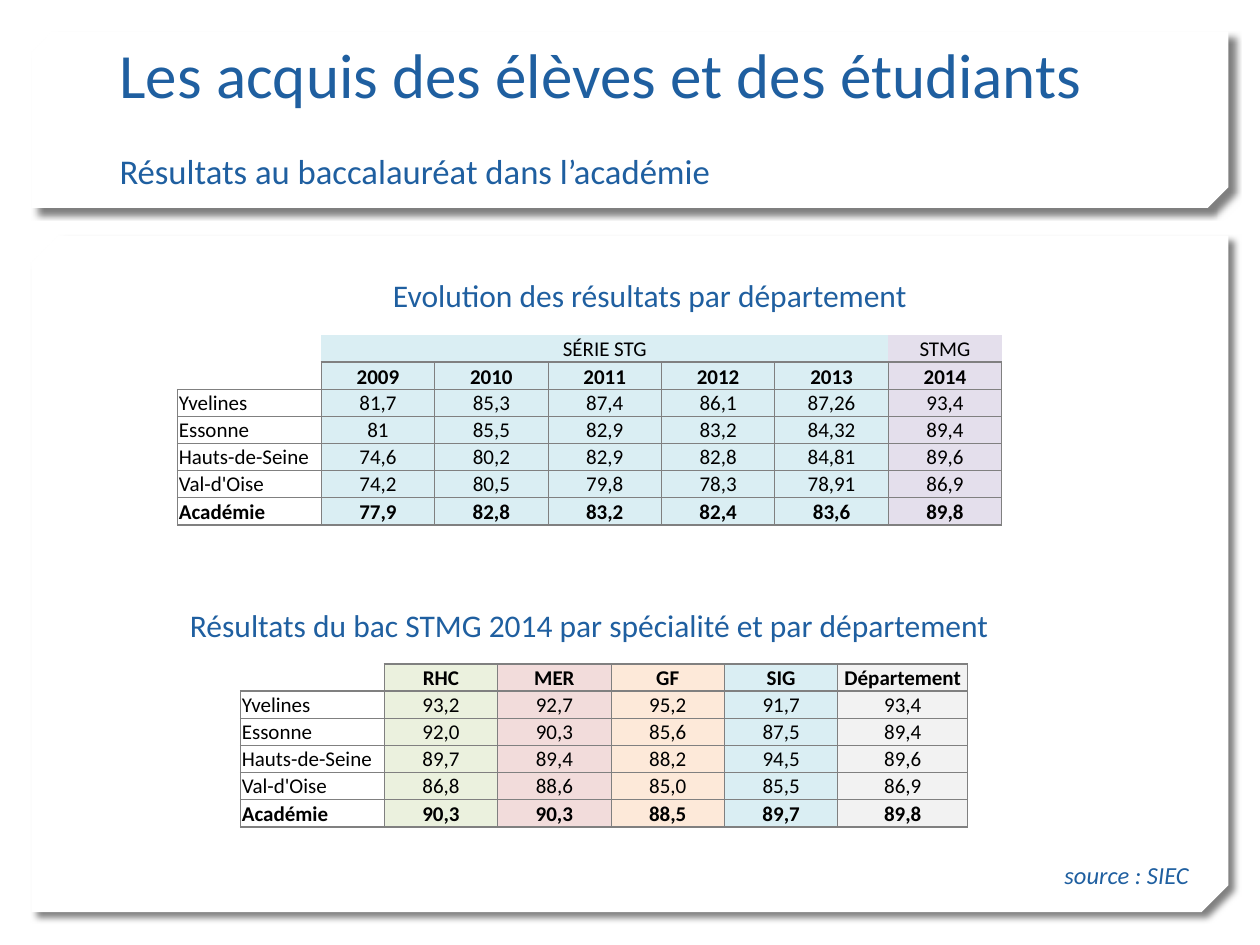
from dataclasses import dataclass

from lxml import etree
from pptx import Presentation
from pptx.dml.color import RGBColor
from pptx.enum.shapes import MSO_SHAPE
from pptx.enum.text import MSO_ANCHOR, MSO_AUTO_SIZE, PP_ALIGN
from pptx.oxml import parse_xml
from pptx.oxml.ns import qn
from pptx.util import Inches, Pt

COLORS = {
    "white": "FFFFFF", "black": "000000", "blue": "1F5FA0", "border": "808080",
    "aqua": "DAEEF3", "lilac": "E4DFEC", "green": "EBF1DE",
    "pink": "F2DCDB", "orange": "FDE9D9", "grey": "F2F2F2",
}
FONT = "Calibri"
NS = 'xmlns:a="http://schemas.openxmlformats.org/drawingml/2006/main"'
THIN, THICK = 0.5, 1
LABEL_W, VALUE_W = 1.14, 0.9


@dataclass
class Panel:
    top: float
    height: float
    snip: float


@dataclass
class Line:
    text: str
    size: float
    italic: bool = False
    before: float = 0


@dataclass
class TextBox:
    box: tuple
    lines: list
    wrap: bool = True
    fixed: bool = False


@dataclass
class ResultTable:
    left: float
    top: float
    widths: list
    heights: list
    header_rows: int
    fills: list
    rows: list
    merge: tuple = ()


PANELS = [Panel(1.87, 5.37, 0.04), Panel(0.25, 1.4, 0.117)]

TEXTS = [
    TextBox((0.85, 0.32, 8.29, 1.25), [
        Line("Les acquis des élèves et des étudiants", 36),
        Line("Résultats au baccalauréat dans l’académie", 19.8, before=22),
    ], fixed=True),
    TextBox((3.02, 2.14, 4.38, 0.4),
            [Line("Evolution des résultats par département", 18)], wrap=False),
    TextBox((1.41, 4.76, 6.9, 0.4),
            [Line("Résultats du bac STMG 2014 par spécialité et par département", 18)]),
    TextBox((8.35, 6.78, 1.24, 0.34),
            [Line("source : SIEC", 14, italic=True)], wrap=False),
]

TABLES = [
    # Results by year
    ResultTable(
        1.41, 2.66, [LABEL_W] + [VALUE_W] * 6, [0.19, 0.22] + [0.21] * 4 + [0.22], 2,
        [None] + ["aqua"] * 5 + ["lilac"],
        [
            ["", "SÉRIE STG", "", "", "", "", "STMG"],
            ["", "2009", "2010", "2011", "2012", "2013", "2014"],
            ["Yvelines", "81,7", "85,3", "87,4", "86,1", "87,26", "93,4"],
            ["Essonne", "81", "85,5", "82,9", "83,2", "84,32", "89,4"],
            ["Hauts-de-Seine", "74,6", "80,2", "82,9", "82,8", "84,81", "89,6"],
            ["Val-d'Oise", "74,2", "80,5", "79,8", "78,3", "78,91", "86,9"],
            ["Académie", "77,9", "82,8", "83,2", "82,4", "83,6", "89,8"],
        ],
        merge=((0, 1), (0, 5))),
    # Results by speciality
    ResultTable(
        1.91, 5.27, [LABEL_W] + [VALUE_W] * 4 + [1.03], [0.19, 0.22] + [0.21] * 3 + [0.22], 1,
        [None, "green", "pink", "orange", "aqua", "grey"],
        [
            ["", "RHC", "MER", "GF", "SIG", "Département"],
            ["Yvelines", "93,2", "92,7", "95,2", "91,7", "93,4"],
            ["Essonne", "92,0", "90,3", "85,6", "87,5", "89,4"],
            ["Hauts-de-Seine", "89,7", "89,4", "88,2", "94,5", "89,6"],
            ["Val-d'Oise", "86,8", "88,6", "85,0", "85,5", "86,9"],
            ["Académie", "90,3", "90,3", "88,5", "89,7", "89,8"],
        ]),
]


def rgb(name: str) -> RGBColor:
    return RGBColor.from_string(COLORS[name])


def set_all(obj, values: dict) -> None:
    for name, value in values.items():
        setattr(obj, name, value)


def add_run(p, text: str, size: float, color: str, **style) -> None:
    r = p.add_run()
    r.text = text
    set_all(r.font, {"name": FONT, "size": Pt(size), **style})
    r.font.color.rgb = rgb(color)


def draw_panel(slide, panel: Panel) -> None:
    sp = slide.shapes.add_shape(MSO_SHAPE.SNIP_2_DIAG_RECTANGLE, Inches(0.25),
                                Inches(panel.top), Inches(9.5), Inches(panel.height))
    sp.adjustments[0], sp.adjustments[1] = 0, panel.snip
    sp.fill.solid()
    sp.fill.fore_color.rgb = rgb("white")
    sp.line.fill.background()
    pr = sp.element.spPr
    pr.find(qn("a:xfrm")).set("flipV", "1")
    pr.append(parse_xml(
        f'<a:effectLst {NS}><a:outerShdw blurRad="{Pt(4)}" dist="{Pt(5)}" dir="2700000" '
        f'algn="tl" rotWithShape="0"><a:srgbClr val="{COLORS["black"]}">'
        f'<a:alpha val="50000"/></a:srgbClr></a:outerShdw></a:effectLst>'))


def draw_text(slide, item: TextBox) -> None:
    tf = slide.shapes.add_textbox(*map(Inches, item.box)).text_frame
    set_all(tf, {
        "word_wrap": item.wrap,
        "auto_size": MSO_AUTO_SIZE.NONE if item.fixed else MSO_AUTO_SIZE.SHAPE_TO_FIT_TEXT,
        "vertical_anchor": MSO_ANCHOR.BOTTOM if item.fixed else MSO_ANCHOR.TOP,
    })
    for i, line in enumerate(item.lines):
        p = tf.add_paragraph() if i else tf.paragraphs[0]
        p.space_before = Pt(line.before)
        add_run(p, line.text, line.size, "blue", italic=line.italic)


def border_widths(t: ResultTable, r: int, c: int) -> list:
    """Widths of the left, right, top and bottom borders; 0 means none."""
    last_header = t.header_rows - 1
    if r < last_header:
        return [0, 0, 0, THICK if c else 0]
    if r == last_header and c == 0:
        return [0, THICK, 0, THICK]
    thick = [c <= 1, c in (0, len(t.widths) - 1),
             r <= t.header_rows, r in (last_header, len(t.rows) - 1)]
    return [THICK if heavy else THIN for heavy in thick]


def set_borders(cell, widths: list) -> None:
    pr = cell._tc.get_or_add_tcPr()
    for i, (side, width) in enumerate(zip("LRTB", widths)):
        paint = (f'<a:solidFill><a:srgbClr val="{COLORS["border"]}"/></a:solidFill>'
                 if width else "<a:noFill/>")
        pr.insert(i, parse_xml(f'<a:ln{side} {NS} w="{Pt(width)}">{paint}</a:ln{side}>'))


def draw_table(slide, t: ResultTable) -> None:
    frame = slide.shapes.add_table(len(t.rows), len(t.widths), Inches(t.left), Inches(t.top),
                                   Inches(sum(t.widths)), Inches(sum(t.heights)))
    table = frame.table
    set_all(table, {"first_row": False, "horz_banding": False})
    for col, width in zip(table.columns, t.widths):
        col.width = Inches(width)
    for row, height in zip(table.rows, t.heights):
        row.height = Inches(height)
    inset = Inches(0.01)
    for r, values in enumerate(t.rows):
        for c, text in enumerate(values):
            cell = table.cell(r, c)
            set_all(cell, {"margin_left": inset, "margin_right": inset, "margin_top": inset,
                           "margin_bottom": 0, "vertical_anchor": MSO_ANCHOR.BOTTOM})
            p = cell.text_frame.paragraphs[0]
            p.alignment = PP_ALIGN.CENTER if c else PP_ALIGN.LEFT
            if text:
                add_run(p, text, 12, "black", bold=r in (t.header_rows - 1, len(t.rows) - 1))
            else:  # keeps empty cells from stretching the row
                etree.SubElement(p._p, qn("a:endParaRPr"), sz="1200")
            if t.fills[c]:
                cell.fill.solid()
                cell.fill.fore_color.rgb = rgb(t.fills[c])
            else:
                cell.fill.background()
            set_borders(cell, border_widths(t, r, c))
    if t.merge:
        start, end = t.merge
        table.cell(*start).merge(table.cell(*end))


def main() -> None:
    prs = Presentation()
    set_all(prs, {"slide_width": Inches(10), "slide_height": Inches(7.5)})
    slide = prs.slides.add_slide(prs.slide_layouts[6])
    for draw, items in ((draw_panel, PANELS), (draw_table, TABLES), (draw_text, TEXTS)):
        for item in items:
            draw(slide, item)
    prs.save("out.pptx")


if __name__ == "__main__":
    main()
